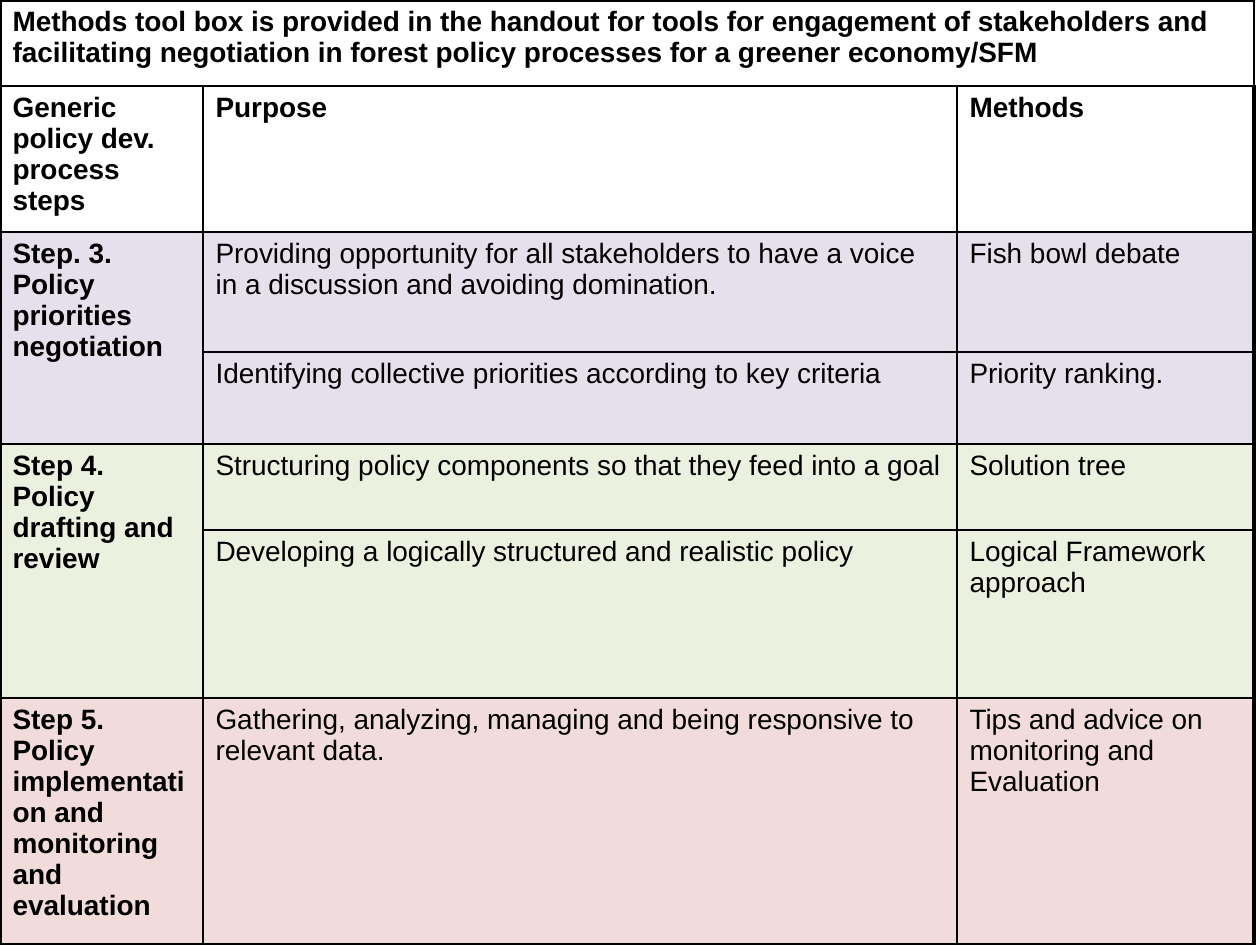
from lxml.etree import SubElement
from pptx import Presentation
from pptx.dml.color import RGBColor
from pptx.oxml.ns import qn
from pptx.util import Emu, Pt

PX = 914400 // 126
COLS = [203, 754, 297]
ROWS = [86, 146, 120, 92, 86, 168, 247]
WHITE, LILAC, GREEN, ROSE = "FFFFFF", "E6E0EC", "EBF1DE", "F2DCDB"
THIN, THICK = 1, 2.25

HEADING = ("Methods tool box is provided in the handout for tools for engagement of "
           "stakeholders and facilitating negotiation in forest policy processes "
           "for a greener economy/SFM")
LABELS = ["Generic policy dev. process steps", "Purpose", "Methods"]

# Each step: name, fill, rows of (purpose, method)
STEPS = [
    ("Step. 3. Policy priorities negotiation", LILAC, [
        ("Providing opportunity for all stakeholders to have a voice in a "
         "discussion and avoiding domination.", "Fish bowl debate"),
        ("Identifying collective priorities according to key criteria",
         "Priority ranking."),
    ]),
    ("Step 4. Policy drafting and review", GREEN, [
        ("Structuring policy components so that they feed into a goal",
         "Solution tree"),
        ("Developing a logically structured and realistic policy",
         "Logical Framework approach"),
    ]),
    ("Step 5. Policy implementation and monitoring and evaluation", ROSE, [
        ("Gathering, analyzing, managing and being responsive to relevant data.",
         "Tips and advice on monitoring and Evaluation"),
    ]),
]


def px(n):
    return Emu(n * PX)


def color(code):
    return RGBColor.from_string(code)


def write(cell, text, bold):
    para = cell.text_frame.paragraphs[0]
    para.space_before = Pt(3.2)
    run = para.add_run()
    run.text = text
    font = run.font
    font.name, font.size, font.bold = "Arial", Pt(16), bold
    font.color.rgb = color("000000")


def edge(cell, side, width):
    line = SubElement(cell._tc.get_or_add_tcPr(), qn(f"a:ln{side}"), w=str(Pt(width)))
    fill = SubElement(line, qn("a:solidFill"))
    SubElement(fill, qn("a:srgbClr"), val="000000")


def paint(grid, row, col, fill):
    """Give a cell its borders, thick on the outside, and then its fill."""
    cell = grid.cell(row, col)
    outer = {"L": col == 0, "R": col == len(COLS) - 1,
             "T": row == 0, "B": row == len(ROWS) - 1}
    for side, thick in outer.items():
        edge(cell, side, THICK if thick else THIN)
    cell.fill.solid()
    cell.fill.fore_color.rgb = color(fill)


def add_grid(slide, left, top):
    frame = slide.shapes.add_table(len(ROWS), len(COLS), px(left), px(top),
                                   px(sum(COLS)), px(sum(ROWS)))
    grid = frame.table
    grid.first_row = grid.horz_banding = False
    for col, width in zip(grid.columns, COLS):
        col.width = px(width)
    for row, height in zip(grid.rows, ROWS):
        row.height = px(height)

    # Borders and fills
    fills = [WHITE, WHITE] + [fill for _, fill, tools in STEPS for _ in tools]
    for row, fill in enumerate(fills):
        for col in range(len(COLS)):
            paint(grid, row, col, fill)

    # Heading and column labels
    grid.cell(0, 0).merge(grid.cell(0, len(COLS) - 1))
    write(grid.cell(0, 0), HEADING, True)
    for col, label in enumerate(LABELS):
        write(grid.cell(1, col), label, True)

    # Policy steps
    row = 2
    for name, _, tools in STEPS:
        if len(tools) > 1:
            grid.cell(row, 0).merge(grid.cell(row + len(tools) - 1, 0))
        write(grid.cell(row, 0), name, True)
        for purpose, method in tools:
            write(grid.cell(row, 1), purpose, False)
            write(grid.cell(row, 2), method, False)
            row += 1


def main():
    deck = Presentation()
    deck.slide_width, deck.slide_height = px(1260), px(945)
    slide = deck.slides.add_slide(deck.slide_layouts[6])
    add_grid(slide, 0, 0)
    deck.save("out.pptx")


if __name__ == "__main__":
    main()
